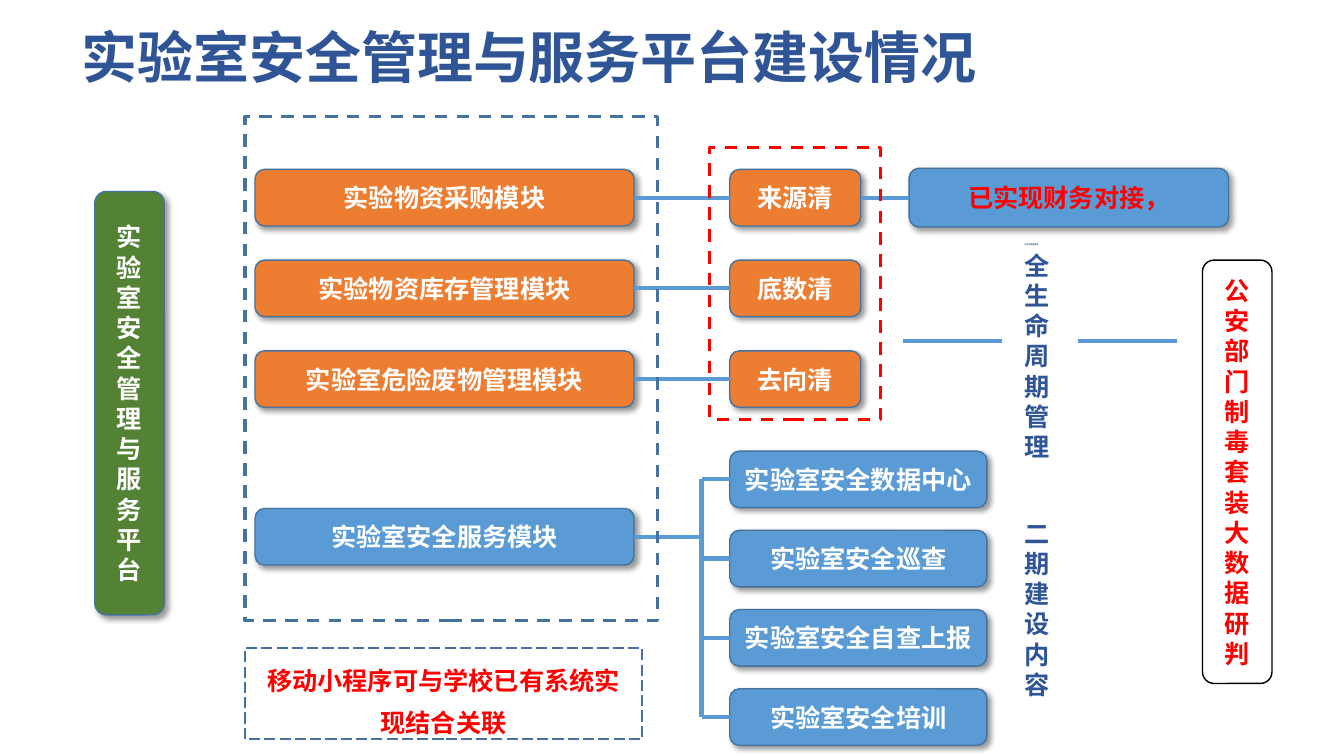
from pptx import Presentation
from pptx.util import Pt
from pptx.dml.color import RGBColor
from pptx.enum.shapes import MSO_SHAPE, MSO_CONNECTOR
from pptx.enum.text import PP_ALIGN, MSO_ANCHOR
from pptx.enum.dml import MSO_LINE
from pptx.oxml import parse_xml
from pptx.oxml.ns import qn, nsdecls
from lxml.etree import SubElement

GREEN = RGBColor(0x54, 0x82, 0x35)
ORANGE = RGBColor(0xED, 0x7D, 0x31)
BLUE = RGBColor(0x5B, 0x9B, 0xD5)
EDGE = RGBColor(0x43, 0x73, 0x9E)
NAVY = RGBColor(0x2F, 0x55, 0x97)
RED = RGBColor(0xFF, 0x00, 0x00)
WHITE = RGBColor(0xFF, 0xFF, 0xFF)
BLACK = RGBColor(0x00, 0x00, 0x00)
NOTO = "Noto Sans CJK SC"
SHADE = (f'<a:outerShdw {nsdecls("a")} blurRad="50800" dist="38100" dir="2700000" algn="tl">'
         '<a:srgbClr val="000000"><a:alpha val="40000"/></a:srgbClr></a:outerShdw>')

deck = Presentation()
deck.slide_width, deck.slide_height = Pt(960), Pt(540)
slide = deck.slides.add_slide(deck.slide_layouts[5])
shapes = slide.shapes


def write(shape, text, color, size=18, face=NOTO, align=PP_ALIGN.CENTER, anchor=MSO_ANCHOR.MIDDLE):
    frame = shape.text_frame
    frame.word_wrap = True
    frame.vertical_anchor = anchor
    para = frame.paragraphs[0]
    para.alignment = align
    run = para.add_run()
    run.text = text
    font = run.font
    font.name, font.size, font.bold = face, Pt(size), True
    font.color.rgb = color
    SubElement(font._element, qn("a:ea")).set("typeface", NOTO)
    return para


def add_box(x, y, w, h, fill=None, edge=EDGE, width=1, kind=MSO_SHAPE.ROUNDED_RECTANGLE, shade=True):
    box = shapes.add_shape(kind, Pt(x), Pt(y), Pt(w), Pt(h))
    if fill is None:
        box.fill.background()
    else:
        box.fill.solid()
        box.fill.fore_color.rgb = fill
    box.line.color.rgb = edge
    box.line.width = Pt(width)
    box.shadow.inherit = False
    if shade:
        box._element.spPr.find(qn("a:effectLst")).append(parse_xml(SHADE))
    return box


# Title
title = shapes.title
title.left, title.top, title.width, title.height = Pt(51), Pt(12), Pt(775.5), Pt(55.5)
write(title, "实验室安全管理与服务平台建设情况", NAVY, 40, align=PP_ALIGN.LEFT)

# Platform pillar
write(add_box(67.7, 136.8, 49.7, 302.4, GREEN), "实验室安全管理与服务平台", WHITE)

# Modules, each with its clear result
LINKS = []
rows = [("实验物资采购模块", "来源清"),
        ("实验物资库存管理模块", "底数清"),
        ("实验室危险废物管理模块", "去向清")]
clear = []
for i, (name, result) in enumerate(rows):
    y = 121 + 64.8 * i
    left = add_box(182.2, y, 270.7, 40.4, ORANGE)
    write(left, name, WHITE)
    right = add_box(521.3, y, 93.6, 40.4, ORANGE)
    write(right, result, WHITE)
    clear.append(right)
    LINKS.append((left, right, 452.9, y + 20.2, 521.3, y + 20.2))

# Finance box
money = add_box(649.4, 120.2, 228.2, 42, BLUE)
write(money, "已实现财务对接，", RED)
LINKS.append((clear[0], money, 614.9, 141.2, 649.4, 141.2))

# Service module and its branches
BUS = 501.1
serve = add_box(182.2, 363.2, 270.7, 40.4, BLUE)
write(serve, "实验室安全服务模块", WHITE)
LINKS.append((serve, None, 452.9, 383.4, BUS, 383.4))
tasks = ["实验室安全数据中心", "实验室安全巡查", "实验室安全自查上报", "实验室安全培训"]
for i, name in enumerate(tasks):
    y = 322.2 + 56.6 * i
    task = add_box(521.3, y, 183.6, 40.4, BLUE)
    write(task, name, WHITE)
    LINKS.append((None, task, BUS, y + 20.2, 521.3, y + 20.2))
LINKS.append((None, None, BUS, 342.4, BUS, 512.2))

# Lines beside the life cycle text
for x in (645, 769.7):
    LINKS.append((None, None, x, 243.4, x + 71, 243.4))

# Connectors
for start, end, x1, y1, x2, y2 in LINKS:
    line = shapes.add_connector(MSO_CONNECTOR.STRAIGHT, Pt(x1), Pt(y1), Pt(x2), Pt(y2))
    if start is not None:
        line.begin_connect(start, 3)
    if end is not None:
        line.end_connect(end, 1)
    line.line.color.rgb = BLUE
    line.line.width = Pt(3)
    SubElement(line._element.spPr, qn("a:effectLst"))

# Dashed frames
for x, y, w, h, edge in [(506.9, 105.1, 122.4, 194.4, RED), (175, 83.5, 294.5, 360, EDGE)]:
    frame = add_box(x, y, w, h, None, edge, 2.25, MSO_SHAPE.RECTANGLE, False)
    frame.line.dash_style = MSO_LINE.DASH

# Police box
police = add_box(858.9, 185.8, 49.7, 302.4, WHITE, BLACK, shade=False)
write(police, "公安部门制毒套装大数据研判", RED)

# Upright texts
cycle = "全生命周期管理"
for text, y, h, size, face in [(cycle, 170.6, 8.6, 1.4, "Arial"),
                               (cycle, 175, 160, 18, "Calibri"),
                               ("二期建设内容", 366.5, 138.2, 18, "Calibri")]:
    note = shapes.add_textbox(Pt(724.6), Pt(y), Pt(38.6), Pt(h))
    write(note, text, NAVY, size, face, PP_ALIGN.LEFT, MSO_ANCHOR.TOP)

# Mini program note
mini = add_box(175, 463, 283.7, 64.8, None, EDGE, 1, MSO_SHAPE.RECTANGLE, False)
mini.line.dash_style = MSO_LINE.LONG_DASH
para = write(mini, "移动小程序可与学校已有系统实现结合关联", RED, face="Calibri", anchor=MSO_ANCHOR.TOP)
para.line_spacing = 1.4

deck.save("out.pptx")
